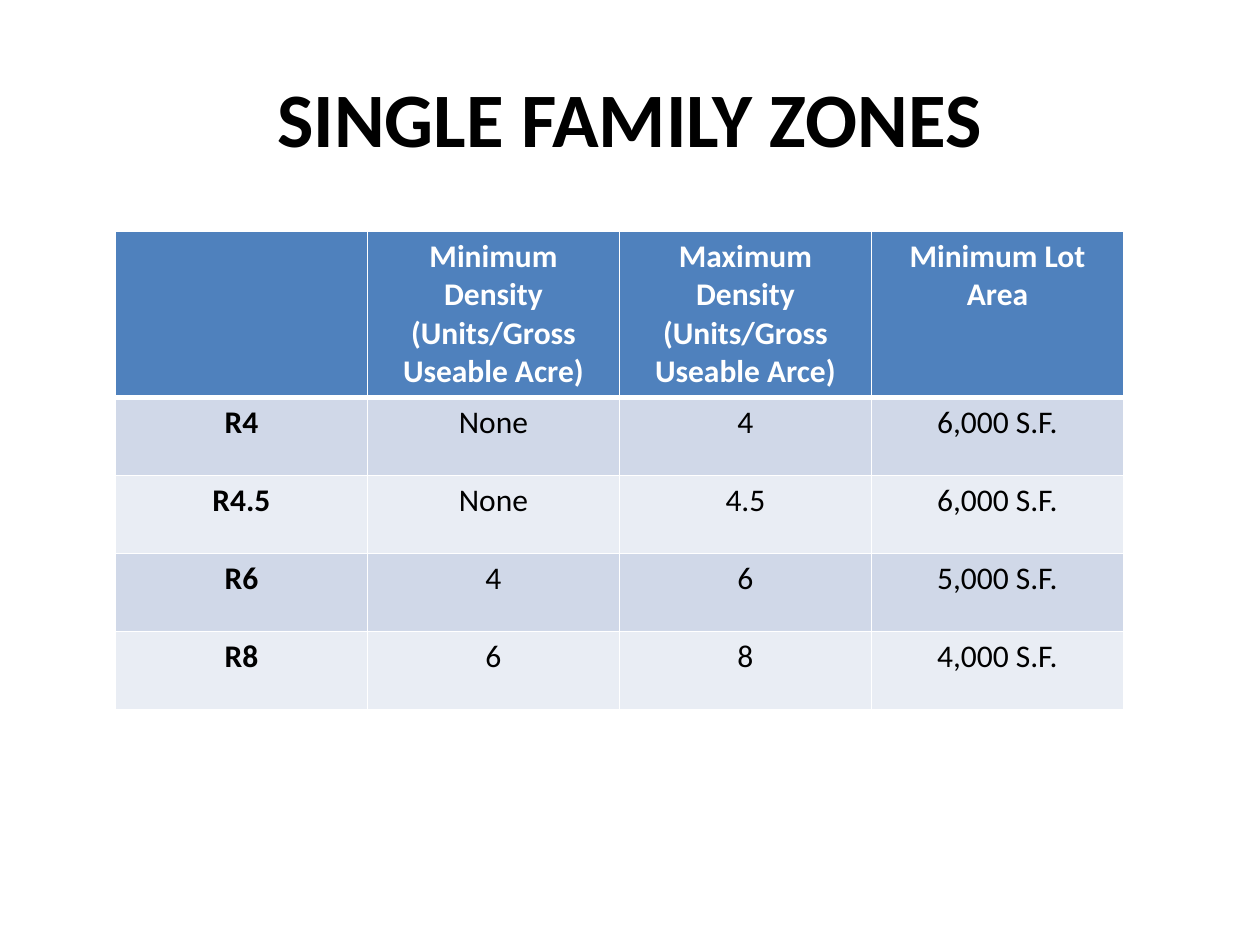
"""Build the slide that compares density and lot area across single family zones."""

from dataclasses import dataclass

from lxml.etree import SubElement
from pptx import Presentation
from pptx.dml.color import RGBColor as Color
from pptx.enum.text import MSO_ANCHOR as Anchor, PP_ALIGN as Align
from pptx.oxml.ns import qn
from pptx.util import Pt


@dataclass(frozen=True)
class Theme:
    font: str = "Calibri"
    title_size: float = 44
    cell_size: float = 18
    ink: str = "000000"
    paper: str = "FFFFFF"
    header: str = "4F81BD"
    bands: tuple[str, str] = ("D0D8E8", "E9EDF4")
    rule: float = 1
    header_rule: float = 3


@dataclass(frozen=True)
class Zone:
    name: str
    minimum_density: str
    maximum_density: str
    lot_area: str

    def values(self) -> tuple[str, ...]:
        return self.name, self.minimum_density, self.maximum_density, self.lot_area


@dataclass(frozen=True)
class CellStyle:
    fill: str
    color: str
    bold: bool
    top: float
    bottom: float


THEME = Theme()
TITLE = "SINGLE FAMILY ZONES"
HEADINGS = (
    (),
    ("Minimum Density", "(Units/Gross Useable Acre)"),
    ("Maximum Density", "(Units/Gross Useable Arce)"),
    ("Minimum Lot Area",),
)
ZONES = (
    Zone("R4", "None", "4", "6,000 S.F."),
    Zone("R4.5", "None", "4.5", "6,000 S.F."),
    Zone("R6", "4", "6", "5,000 S.F."),
    Zone("R8", "6", "8", "4,000 S.F."),
)
TABLE_LEFT, TABLE_TOP, TABLE_WIDTH, TABLE_HEIGHT = 66, 132, 576, 272
HEADER_HEIGHT, ZONE_HEIGHT = 77, 44.6


def add_text(paragraph, text: str, size: float, color: str, bold: bool) -> None:
    paragraph.alignment = Align.CENTER
    run = paragraph.add_run()
    run.text = text
    run.font.name = THEME.font
    run.font.size = Pt(size)
    run.font.bold = bold
    run.font.color.rgb = Color.from_string(color)


def add_borders(cell, style: CellStyle) -> None:
    properties = cell._tc.get_or_add_tcPr()
    widths = {"L": THEME.rule, "R": THEME.rule, "T": style.top, "B": style.bottom}
    for side, width in widths.items():
        line = SubElement(properties, qn(f"a:ln{side}"), w=str(Pt(width)))
        fill = SubElement(line, qn("a:solidFill"))
        SubElement(fill, qn("a:srgbClr"), val=THEME.paper)


def fill_cell(cell, lines: tuple[str, ...], style: CellStyle) -> None:
    add_borders(cell, style)
    cell.fill.solid()
    cell.fill.fore_color.rgb = Color.from_string(style.fill)
    frame = cell.text_frame
    for index, line in enumerate(lines):
        paragraph = frame.add_paragraph() if index else frame.paragraphs[0]
        add_text(paragraph, line, THEME.cell_size, style.color, style.bold)


def add_title(slide) -> None:
    title = slide.shapes.title
    title.left, title.top, title.width, title.height = Pt(36), Pt(21.6), Pt(648), Pt(90)
    title.text_frame.vertical_anchor = Anchor.MIDDLE
    add_text(title.text_frame.paragraphs[0], TITLE, THEME.title_size, THEME.ink, True)


def add_zone_table(slide) -> None:
    shape = slide.shapes.add_table(
        len(ZONES) + 1, len(HEADINGS),
        Pt(TABLE_LEFT), Pt(TABLE_TOP), Pt(TABLE_WIDTH), Pt(TABLE_HEIGHT),
    )
    table = shape.table
    for index, row in enumerate(table.rows):
        row.height = Pt(ZONE_HEIGHT if index else HEADER_HEIGHT)
    shape.height = Pt(TABLE_HEIGHT)

    header = CellStyle(THEME.header, THEME.paper, True, THEME.rule, THEME.header_rule)
    for column, lines in enumerate(HEADINGS):
        fill_cell(table.cell(0, column), lines, header)
    for index, zone in enumerate(ZONES):
        band = THEME.bands[index % 2]
        top = THEME.rule if index else THEME.header_rule
        for column, value in enumerate(zone.values()):
            style = CellStyle(band, THEME.ink, column == 0, top, THEME.rule)
            fill_cell(table.cell(index + 1, column), (value,), style)


def main() -> None:
    presentation = Presentation()
    presentation.slide_width, presentation.slide_height = Pt(720), Pt(540)
    slide = presentation.slides.add_slide(presentation.slide_layouts[5])
    add_title(slide)
    add_zone_table(slide)
    presentation.save("out.pptx")


if __name__ == "__main__":
    main()
